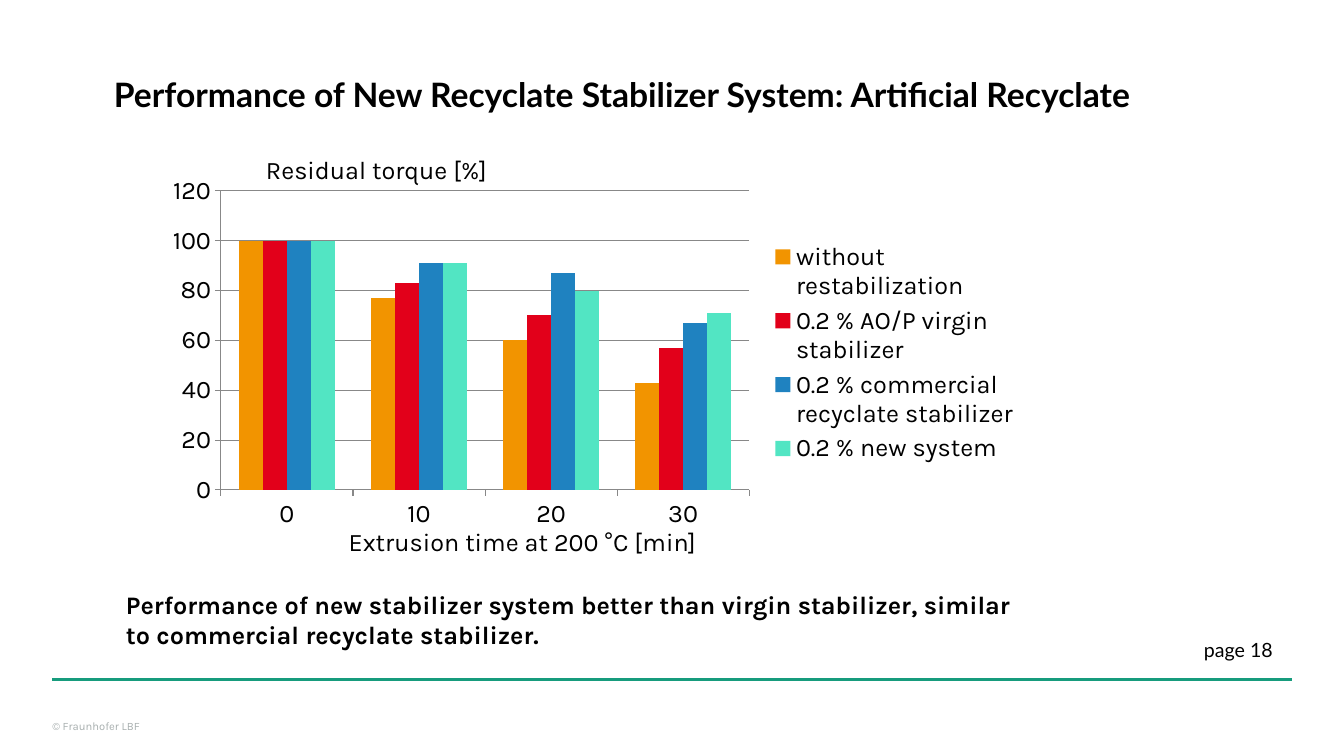
from lxml import etree
from pptx import Presentation
from pptx import util as u
from pptx.chart.data import CategoryChartData
from pptx.dml.color import RGBColor
from pptx.enum import chart as ch, shapes, text
from pptx.oxml import parse_xml
from pptx.oxml.ns import nsdecls, qn

COLORS = {"black": "000000", "gray": "A8AFAF", "grid": "888888", "green": "179C7D"}
HEADING, BODY = "Lato", "Karla"

# Places are left, top, width, height in percent of the slide's size.
TITLE = ("Performance of New Recyclate Stabilizer System: Artificial Recyclate",
         (7.73, 9.07, 88.37, 6.67))
CONCLUSION = ("Performance of new stabilizer system better than virgin stabilizer, "
              "similar to commercial recyclate stabilizer.",
              (8.63, 77.33, 67.97, 9.47))
AXIS_LABELS = [
    ("Residual torque [%]", (19.05, 19.73, 19.05, 5.33)),
    ("Extrusion time at 200 °C [min]", (25.21, 68.93, 28.36, 5.33)),
]
PAGE = ("page 18", (89.57, 84.27, 6.08, 3.2))
COPYRIGHT = ("© Fraunhofer LBF", (3.9, 95.1, 14.78, 2.4))
FOOTER_RULE = (3.9, 89.87, 92.2, 0)

CHART_PLACE = (11.63, 22.4, 64.97, 48.53)
PLOT_LAYOUT = (0.074, 0.059, 0.605, 0.815)  # shares of the chart
MINUTES = ["0", "10", "20", "30"]
TORQUE = [
    ("without restabilization", (100, 77, 60, 43), "F29400"),
    ("0.2 % AO/P virgin stabilizer", (100, 83, 70, 57), "E2001A"),
    ("0.2 % commercial recyclate stabilizer", (100, 91, 87, 67), "1F82C0"),
    ("0.2 % new system", (100, 91, 80, 71), "52E5C3"),
]

prs = Presentation()
prs.slide_width, prs.slide_height = u.Inches(13.33), u.Inches(7.5)
slide = prs.slides.add_slide(prs.slide_layouts[5])


def place(left, top, width, height):
    """Turn percent of the slide into lengths."""
    return [round(share * side / 100) for share, side in
            zip((left, top, width, height), (prs.slide_width, prs.slide_height) * 2)]


def set_font(font, name, size, color="black", bold=False):
    font.name, font.size, font.bold = name, u.Pt(size), bold
    font.color.rgb = RGBColor.from_string(COLORS[color])


def write(box, words, name, size, color="black", bold=False, wrap=True,
          anchor=text.MSO_ANCHOR.TOP, inset=True):
    frame = box.text_frame
    frame.text = words
    frame.word_wrap = wrap
    frame.auto_size = text.MSO_AUTO_SIZE.NONE
    frame.vertical_anchor = anchor
    if not inset:
        frame.margin_left = frame.margin_right = 0
        frame.margin_top = frame.margin_bottom = 0
    paragraph = frame.paragraphs[0]
    paragraph.alignment = text.PP_ALIGN.LEFT
    set_font(paragraph.font, name, size, color, bold)


def add_text(content, *style, **options):
    words, spot = content
    write(slide.shapes.add_textbox(*place(*spot)), words, *style, **options)


def add_torque_chart():
    data = CategoryChartData()
    data.categories = MINUTES
    for name, values, _ in TORQUE:
        data.add_series(name, values)
    chart = slide.shapes.add_chart(ch.XL_CHART_TYPE.COLUMN_CLUSTERED,
                                   *place(*CHART_PLACE), data).chart
    set_font(chart.font, BODY, 18)
    chart.has_title = False
    chart.has_legend = True
    chart.legend.position = ch.XL_LEGEND_POSITION.RIGHT
    chart.legend.include_in_layout = False

    plot = chart.plots[0]
    plot.gap_width, plot.overlap, plot.vary_by_categories = 150, 0, False
    for series, (_, _, color) in zip(plot.series, TORQUE):
        series.format.fill.solid()
        series.format.fill.fore_color.rgb = RGBColor.from_string(color)

    scale = chart.value_axis
    scale.minimum_scale, scale.maximum_scale, scale.major_unit = 0, 120, 20
    scale.has_major_gridlines = True
    for part in (scale, chart.category_axis, scale.major_gridlines):
        part.format.line.color.rgb = RGBColor.from_string(COLORS["grid"])
        part.format.line.width = u.Pt(0.75)
    for axis in (scale, chart.category_axis):
        axis.major_tick_mark = ch.XL_TICK_MARK.OUTSIDE

    sides = "".join(f'<c:{side} val="{share}"/>'
                    for side, share in zip("xywh", PLOT_LAYOUT))
    layout = parse_xml(
        f'<c:layout {nsdecls("c")}><c:manualLayout><c:layoutTarget val="inner"/>'
        f'<c:xMode val="edge"/><c:yMode val="edge"/>{sides}'
        '</c:manualLayout></c:layout>')
    plot_area = chart.element.find(".//" + qn("c:plotArea"))
    for automatic in plot_area.findall(qn("c:layout")):
        plot_area.remove(automatic)
    plot_area.insert(0, layout)


def add_footer_rule():
    left, top, width, _ = place(*FOOTER_RULE)
    rule = slide.shapes.add_connector(shapes.MSO_CONNECTOR.STRAIGHT,
                                      left, top, left + width, top)
    rule.line.color.rgb = RGBColor.from_string(COLORS["green"])
    rule.line.width = u.Pt(2.5)
    etree.SubElement(rule.element.spPr, qn("a:effectLst"))


add_text(COPYRIGHT, BODY, 8, "gray", inset=False)
add_footer_rule()
add_text(PAGE, HEADING, 14, wrap=False, anchor=text.MSO_ANCHOR.BOTTOM, inset=False)

title = slide.shapes.title
title.left, title.top, title.width, title.height = place(*TITLE[1])
write(title, TITLE[0], HEADING, 24, bold=True)

add_text(CONCLUSION, BODY, 18, bold=True)
add_torque_chart()
for label in AXIS_LABELS:
    add_text(label, BODY, 18, wrap=False)

prs.save("out.pptx")
